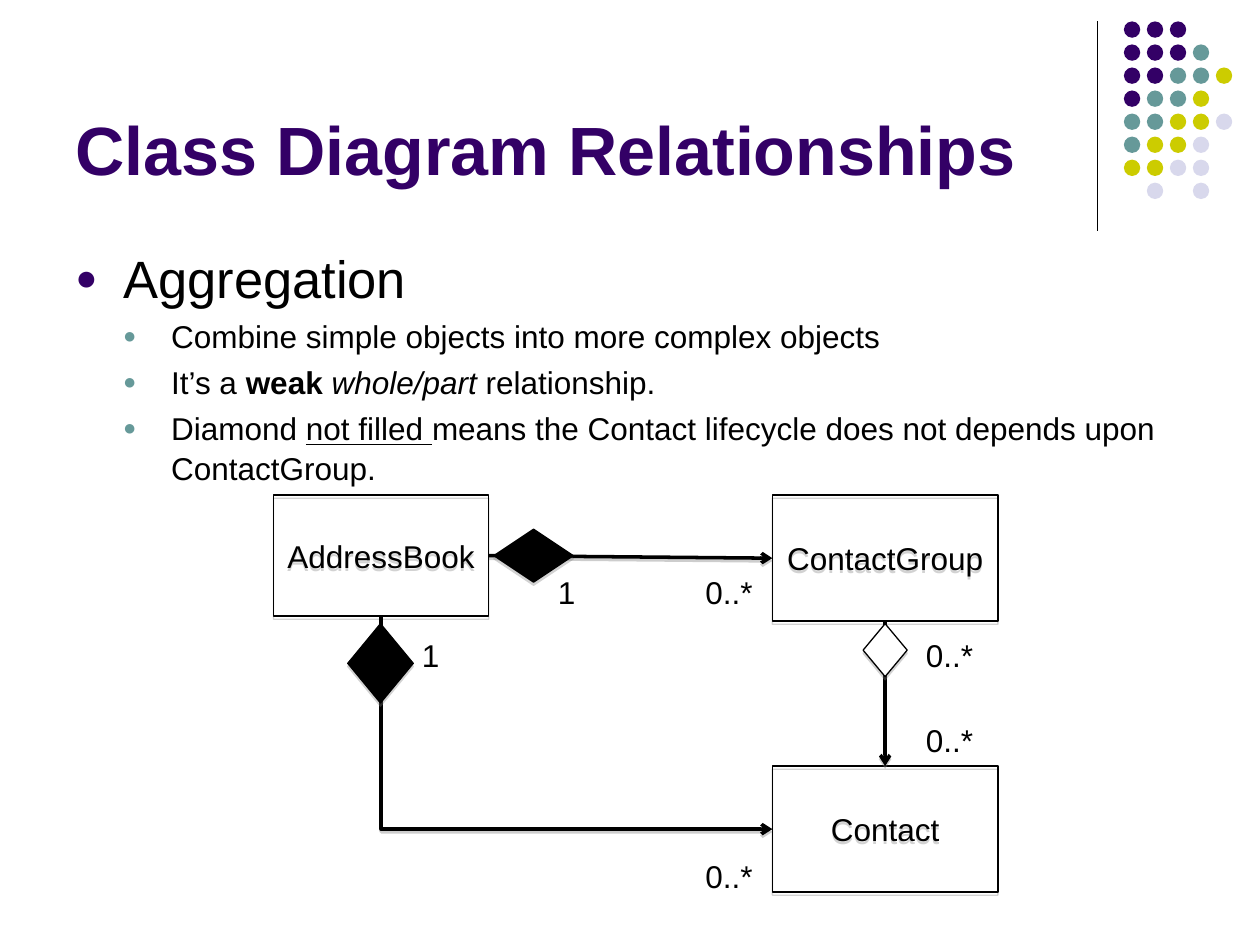
from typing import NamedTuple, Optional

from pptx import Presentation
from pptx.dml.color import RGBColor
from pptx.enum.shapes import MSO_CONNECTOR, MSO_SHAPE
from pptx.enum.text import MSO_ANCHOR, MSO_AUTO_SIZE, PP_ALIGN
from pptx.oxml.ns import qn
from pptx.util import Inches, Pt
from lxml.etree import SubElement

FONT = "Arial"
BLACK, WHITE, PURPLE, TEAL = "000000", "FFFFFF", "330066", "669999"
DOT_COLORS = {"P": PURPLE, "T": TEAL, "Y": "CCCC00", "L": "D8D8EC"}
DOT_ROWS = ["PPP", "PPPT", "PPTTY", "PTTY", "TTYYL", "TYYL", "YYLL", " L L"]
BOTTOM, LEFT, RIGHT, TOP = 2, 1, 3, 0


class Node(NamedTuple):
    left: float
    top: float
    width: float
    height: float
    text: str = ""
    fill: Optional[str] = None
    preset: MSO_SHAPE = MSO_SHAPE.RECTANGLE


class Label(NamedTuple):
    left: float
    top: float
    width: float
    text: str


class Bullet(NamedTuple):
    level: int
    size: int
    color: str
    runs: list


CLASSES = [
    Node(2.17, 3.93, 1.71, 0.96, "AddressBook"),
    Node(6.13, 3.93, 1.79, 1, "ContactGroup"),
    Node(6.13, 6.08, 1.79, 1, "Contact"),
]
DIAMONDS = [
    Node(3.92, 4.2, 0.63, 0.42, fill=BLACK, preset=MSO_SHAPE.DIAMOND),
    Node(2.76, 4.95, 0.52, 0.63, fill=BLACK, preset=MSO_SHAPE.DIAMOND),
    Node(6.85, 4.95, 0.35, 0.42, fill=WHITE, preset=MSO_SHAPE.DIAMOND),
]
LABELS = [
    Label(3.25, 5, 0.34, "1"),
    Label(5.5, 6.75, 0.58, "0..*"),
    Label(7.25, 5.67, 0.58, "0..*"),
    Label(7.25, 5, 0.58, "0..*"),
    Label(5.5, 4.5, 0.58, "0..*"),
    Label(4.33, 4.5, 0.34, "1"),
]
BULLETS = [
    Bullet(0, 30, PURPLE, [("Aggregation", {})]),
    Bullet(1, 18, TEAL, [("Combine simple objects into more complex objects", {})]),
    Bullet(1, 18, TEAL, [("It’s a ", {}), ("weak ", {"bold": True}),
                         ("whole/part ", {"italic": True}), ("relationship.", {})]),
    Bullet(1, 18, TEAL, [("Diamond ", {}), ("not filled ", {"underline": True}),
                         ("means the Contact lifecycle does not depends upon ContactGroup.", {})]),
]


def rgb(color: str) -> RGBColor:
    return RGBColor.from_string(color)


def add_run(paragraph, text: str, size: int, color: str = BLACK, **formats) -> None:
    run = paragraph.add_run()
    run.text = text
    run.font.color.rgb = rgb(color)
    for name, value in {"name": FONT, "size": Pt(size), **formats}.items():
        setattr(run.font, name, value)


def add_shadow(effects, opacity: int, distance: float) -> None:
    shadow = SubElement(effects, qn("a:outerShdw"), blurRad="0", dist=str(Pt(distance)),
                        dir="5400000", rotWithShape="0")
    color = SubElement(shadow, qn("a:srgbClr"), val="808080")
    SubElement(color, qn("a:alpha"), val=str(opacity * 1000))


def add_text_box(slide, left: float, top: float, width: float, height: float, **formats):
    box = slide.shapes.add_textbox(Inches(left), Inches(top), Inches(width), Inches(height))
    for name, value in formats.items():
        setattr(box.text_frame, name, value)
    return box.text_frame


def add_line(slide, kind: MSO_CONNECTOR, points: tuple, width: float):
    connector = slide.shapes.add_connector(kind, *(Inches(value) for value in points))
    connector.line.color.rgb = rgb(BLACK)
    connector.line.width = Pt(width)
    effects = SubElement(connector._element.spPr, qn("a:effectLst"))
    return connector, effects


def add_arrow(slide, kind: MSO_CONNECTOR, source, source_side: int, target, target_side: int):
    connector, effects = add_line(slide, kind, (0, 0, 1, 1), 2)
    connector.begin_connect(source, source_side)
    connector.end_connect(target, target_side)
    outline = connector._element.spPr.find(qn("a:ln"))
    SubElement(outline, qn("a:tailEnd"), type="arrow")
    add_shadow(effects, 38, 1.6)
    return connector


def bend_down_then_right(connector) -> None:
    across, down = connector.width, connector.height
    center_x = connector.left + across // 2
    center_y = connector.top + down // 2
    geometry = {"left": center_x - down // 2, "top": center_y - across // 2,
                "width": down, "height": across}
    for name, value in geometry.items():
        setattr(connector, name, value)
    properties = connector._element.spPr
    properties.find(qn("a:prstGeom")).set("prst", "bentConnector2")
    transform = properties.find(qn("a:xfrm"))
    transform.set("rot", "16200000")
    transform.set("flipH", "1")


def add_node(slide, node: Node):
    shape = slide.shapes.add_shape(node.preset, Inches(node.left), Inches(node.top),
                                   Inches(node.width), Inches(node.height))
    if node.fill:
        shape.fill.solid()
        shape.fill.fore_color.rgb = rgb(node.fill)
    else:
        shape.fill.background()
    shape.line.color.rgb = rgb(BLACK)
    shape.line.width = Pt(0.75)
    shape.shadow.inherit = False
    add_shadow(shape._element.spPr.find(qn("a:effectLst")), 35, 1.8)
    if node.text:
        shape.text_frame.vertical_anchor = MSO_ANCHOR.MIDDLE
        paragraph = shape.text_frame.paragraphs[0]
        paragraph.alignment = PP_ALIGN.CENTER
        add_run(paragraph, node.text, 18)
    return shape


def add_dots(slide) -> None:
    for row, colors in enumerate(DOT_ROWS):
        for column, key in enumerate(colors):
            if key in DOT_COLORS:
                dot = slide.shapes.add_shape(
                    MSO_SHAPE.OVAL, Inches(8.92 + 0.73 * column / 4),
                    Inches(0.17 + 1.28 * row / 7), Inches(0.13), Inches(0.13))
                dot.fill.solid()
                dot.fill.fore_color.rgb = rgb(DOT_COLORS[key])
                dot.line.fill.background()
                dot.shadow.inherit = False


def add_bullet(paragraph, bullet: Bullet) -> None:
    formats = {"level": bullet.level, "space_before": Pt(bullet.size * 0.2), "line_spacing": 1.05}
    for name, value in formats.items():
        setattr(paragraph, name, value)
    properties = paragraph._p.get_or_add_pPr()
    properties.set("marL", str(Inches(0.38 * (bullet.level + 1))))
    properties.set("indent", str(Inches(-0.38)))
    color = SubElement(properties, qn("a:buClr"))
    SubElement(color, qn("a:srgbClr"), val=bullet.color)
    SubElement(properties, qn("a:buSzPct"), val="70000")
    SubElement(properties, qn("a:buFont"), typeface=FONT)
    SubElement(properties, qn("a:buChar"), char="●")
    for text, run_formats in bullet.runs:
        add_run(paragraph, text, bullet.size, **run_formats)


def main() -> None:
    presentation = Presentation()
    presentation.slide_width = Inches(10)
    presentation.slide_height = Inches(7.5)
    slide = presentation.slides.add_slide(presentation.slide_layouts[6])

    add_line(slide, MSO_CONNECTOR.STRAIGHT, (8.71, 0.17, 8.71, 1.83), 0.75)
    add_dots(slide)
    title = add_text_box(slide, 0.5, 0.13, 8.25, 1.42, word_wrap=True,
                         vertical_anchor=MSO_ANCHOR.BOTTOM)
    add_run(title.paragraphs[0], "Class Diagram Relationships", 39, PURPLE, bold=True)
    body = add_text_box(slide, 0.5, 1.88, 9, 4.82, word_wrap=True)
    for index, bullet in enumerate(BULLETS):
        add_bullet(body.add_paragraph() if index else body.paragraphs[0], bullet)

    address_book, contact_group, contact = [add_node(slide, node) for node in CLASSES]
    add_arrow(slide, MSO_CONNECTOR.STRAIGHT, address_book, RIGHT, contact_group, LEFT)
    add_arrow(slide, MSO_CONNECTOR.STRAIGHT, contact_group, BOTTOM, contact, TOP)
    bend_down_then_right(
        add_arrow(slide, MSO_CONNECTOR.ELBOW, address_book, BOTTOM, contact, LEFT))
    for diamond in DIAMONDS:
        add_node(slide, diamond)
    for label in LABELS:
        frame = add_text_box(slide, label.left, label.top, label.width, 0.4, word_wrap=False,
                             auto_size=MSO_AUTO_SIZE.SHAPE_TO_FIT_TEXT)
        add_run(frame.paragraphs[0], label.text, 18)
    presentation.save("out.pptx")


if __name__ == "__main__":
    main()
